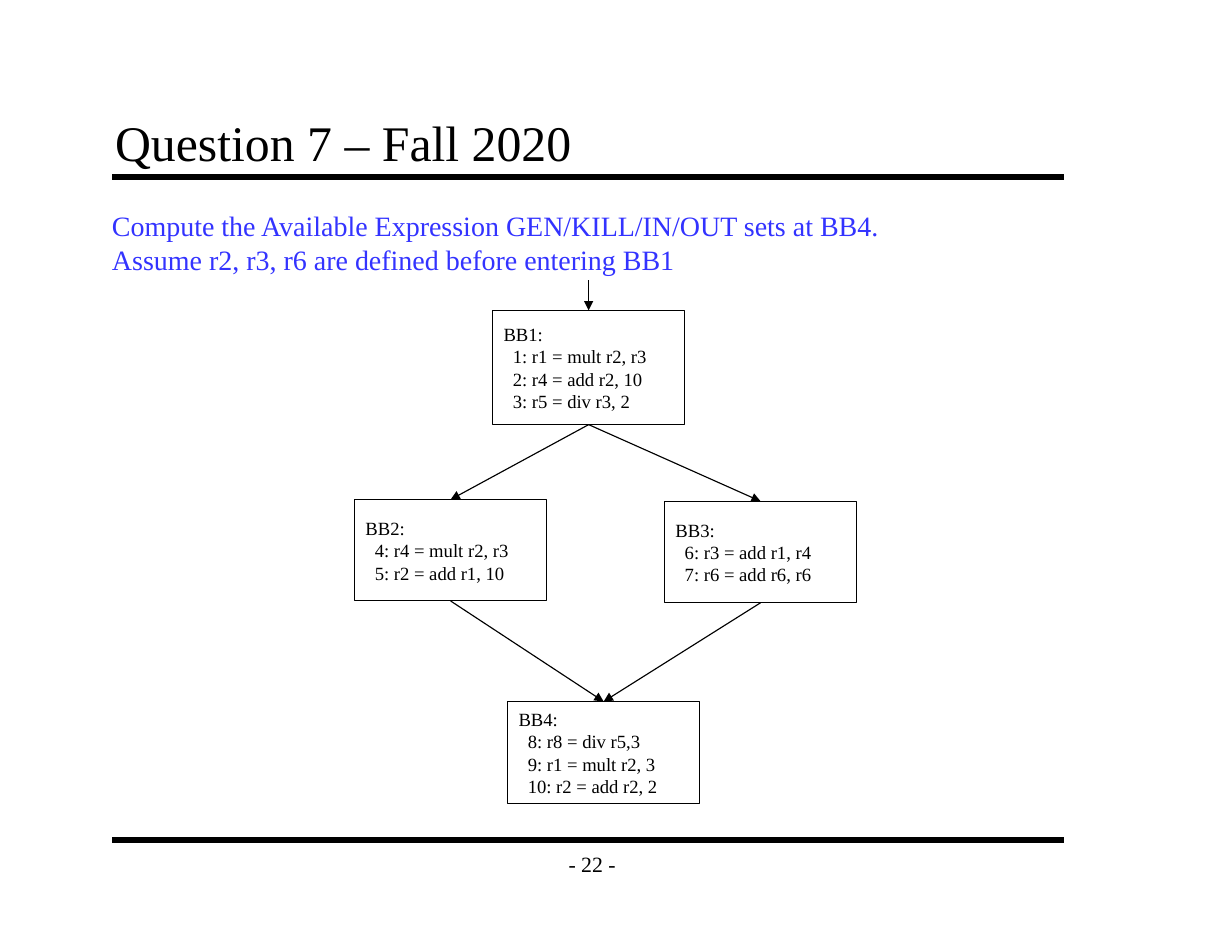
"""Build a slide with a control-flow graph of four basic blocks."""
from dataclasses import dataclass

from lxml import etree
from pptx import Presentation
from pptx.dml.color import RGBColor
from pptx.enum import shapes, text
from pptx.oxml import ns
from pptx.util import Cm, Pt


@dataclass(frozen=True)
class Theme:
    font: str = "Times New Roman"
    ink: RGBColor = RGBColor(0, 0, 0)
    paper: RGBColor = RGBColor(255, 255, 255)
    accent: RGBColor = RGBColor(0x33, 0x33, 0xFF)
    title: int = 32
    body: int = 18
    page: int = 14
    code: int = 12
    rule: float = 4
    edge: float = 0.75


THEME = Theme()
TITLE = "Question 7 – Fall 2020"
TASK = ["Compute the Available Expression GEN/KILL/IN/OUT sets at BB4.",
        "Assume r2, r3, r6 are defined before entering BB1"]
PAGE = "- 22 -"
RULES = [4.01, 19.05]
LEFT, RIGHT = 2.54, 24.13
ENTRY_TOP = 6.35
BLOCK_WIDTH = 4.36
CODE_INDENT = 0.21
BLOCKS = {
    "BB1": (11.17, 7.04, 2.59, ["1: r1 = mult r2, r3", "2: r4 = add r2, 10", "3: r5 = div r3, 2"]),
    "BB2": (8.04, 11.33, 2.3, ["4: r4 = mult r2, r3", "5: r2 = add r1, 10"]),
    "BB3": (15.07, 11.37, 2.3, ["6: r3 = add r1, r4", "7: r6 = add r6, r6"]),
    "BB4": (11.51, 15.91, 2.31, ["8: r8 = div r5,3", "9: r1 = mult r2, 3", "10: r2 = add r2, 2"]),
}
EDGES = [("BB1", "BB2"), ("BB1", "BB3"), ("BB2", "BB4"), ("BB3", "BB4")]
TOP, BOTTOM = 0, 2


def add_run(p, words, size, color):
    r = p.add_run()
    r.text = words
    r.font.name, r.font.size = THEME.font, Pt(size)
    r.font.color.rgb = color


def add_text(s, box, lines, size, color, anchor, align=text.PP_ALIGN.LEFT, wrap=True, inset=(0.28, 0.15)):
    tf = s.shapes.add_textbox(*map(Cm, box)).text_frame
    tf.word_wrap, tf.vertical_anchor = wrap, anchor
    tf.margin_left = tf.margin_right = Cm(inset[0])
    tf.margin_top = tf.margin_bottom = Cm(inset[1])
    p = tf.paragraphs[0]
    p.alignment = align
    for i, line in enumerate(lines):
        if i:
            p.add_line_break()
        add_run(p, line, size, color)


def add_block(s, name, left, top, height, code):
    sp = s.shapes.add_shape(shapes.MSO_SHAPE.RECTANGLE, Cm(left), Cm(top), Cm(BLOCK_WIDTH), Cm(height))
    sp.shadow.inherit = False
    sp.fill.solid()
    sp.fill.fore_color.rgb = THEME.paper
    sp.line.color.rgb, sp.line.width = THEME.ink, Pt(THEME.edge)
    tf = sp.text_frame
    tf.word_wrap, tf.vertical_anchor = True, text.MSO_ANCHOR.MIDDLE
    for i, line in enumerate([f"{name}:", *code]):
        p = tf.add_paragraph() if i else tf.paragraphs[0]
        p.alignment = text.PP_ALIGN.LEFT
        if i:
            p._p.get_or_add_pPr().set("marL", str(Cm(CODE_INDENT)))
        add_run(p, line, THEME.code, THEME.ink)
    return sp


def add_line(s, start, end, width, arrow=False):
    line = s.shapes.add_connector(shapes.MSO_CONNECTOR.STRAIGHT, *start, *end)
    line.line.color.rgb, line.line.width = THEME.ink, Pt(width)
    if arrow:
        etree.SubElement(line.line._get_or_add_ln(), ns.qn("a:tailEnd"), type="triangle")
    etree.SubElement(line._element.spPr, ns.qn("a:effectLst"))
    return line


def top_middle(sp):
    return sp.left + sp.width // 2, sp.top


def bottom_middle(sp):
    return sp.left + sp.width // 2, sp.top + sp.height


def main():
    prs = Presentation()
    prs.slide_width, prs.slide_height = Cm(27.94), Cm(21.59)
    s = prs.slides.add_slide(prs.slide_layouts[6])
    for y in RULES:
        add_line(s, (Cm(LEFT), Cm(y)), (Cm(RIGHT), Cm(y)), THEME.rule)
    add_text(s, (12.48, 19.05, 1.9, 1.07), [PAGE], THEME.page, THEME.ink,
             text.MSO_ANCHOR.MIDDLE, text.PP_ALIGN.CENTER, wrap=False)
    add_text(s, (2.33, 2.34, 21.59, 1.7), [TITLE], THEME.title, THEME.ink, text.MSO_ANCHOR.BOTTOM)
    blocks = {name: add_block(s, name, *rest) for name, rest in BLOCKS.items()}
    for source, target in EDGES:
        start, end = blocks[source], blocks[target]
        edge = add_line(s, bottom_middle(start), top_middle(end), THEME.edge, arrow=True)
        edge.begin_connect(start, BOTTOM)
        edge.end_connect(end, TOP)
    first = blocks["BB1"]
    x, _ = top_middle(first)
    entry = add_line(s, (x, Cm(ENTRY_TOP)), top_middle(first), THEME.edge, arrow=True)
    entry.end_connect(first, TOP)
    add_text(s, (2.29, 4.6, 18.08, 1.8), TASK, THEME.body, THEME.accent,
             text.MSO_ANCHOR.TOP, wrap=False, inset=(0.25, 0.13))
    prs.save("out.pptx")


if __name__ == "__main__":
    main()
